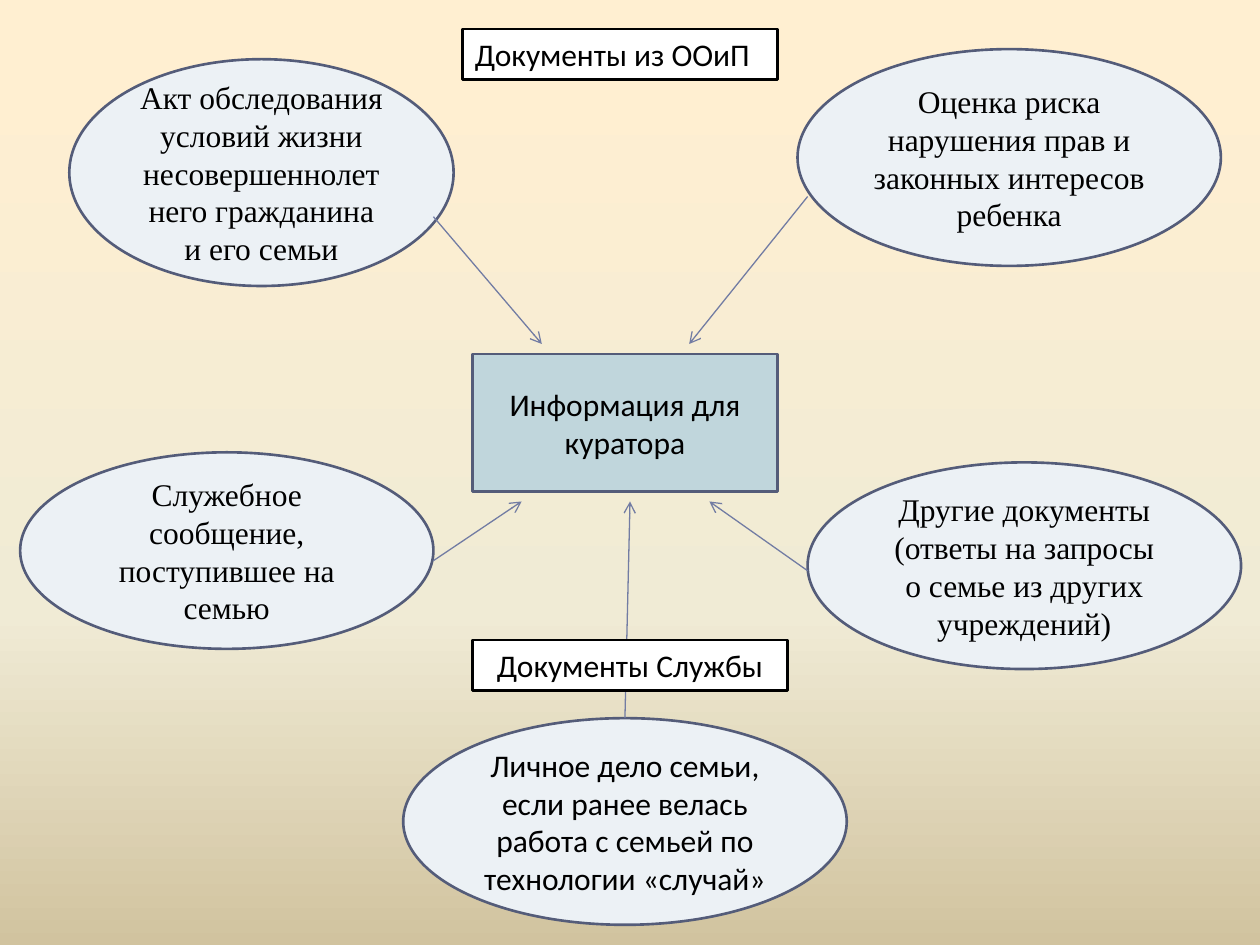
from lxml.etree import SubElement
from pptx import Presentation
from pptx.dml.color import RGBColor
from pptx.enum.shapes import MSO_CONNECTOR, MSO_SHAPE
from pptx.enum.text import MSO_ANCHOR, PP_ALIGN
from pptx.oxml.ns import qn
from pptx.util import Inches, Pt

SERIF, SANS = "Times New Roman", "Calibri"
CENTER_FORMAT = {"word_wrap": True, "vertical_anchor": MSO_ANCHOR.MIDDLE}
LABEL_FORMAT = {"word_wrap": True, "vertical_anchor": MSO_ANCHOR.TOP}


def color(value):
    return RGBColor.from_string(value)


class Diagram:
    text_size = Pt(18)
    outline_width = Pt(1.5)
    arrow_width = Pt(0.75)
    outline, arrow_color = "545C79", "727CA3"

    def __init__(self, deck):
        self.page = deck.slides.add_slide(deck.slide_layouts[6])

    def background(self, stops):
        fill = self.page.background.fill
        fill.gradient()
        fill.gradient_angle = 270
        stop_list = self.page.background._cSld.find(".//" + qn("a:gsLst"))
        for stop in list(stop_list):
            stop_list.remove(stop)
        for position, value in stops:
            stop = SubElement(stop_list, qn("a:gs"), pos=str(position * 1000))
            SubElement(stop, qn("a:srgbClr"), val=value)

    def shape(self, kind, text, place, fill, outline, font, align, frame_format):
        box = self.page.shapes.add_shape(kind, *map(Inches, place))
        box.shadow.inherit = False
        box.fill.solid()
        box.fill.fore_color.rgb = color(fill)
        box.line.color.rgb = color(outline)
        box.line.width = self.outline_width
        for name, value in frame_format.items():
            setattr(box.text_frame, name, value)
        para = box.text_frame.paragraphs[0]
        para.alignment = align
        span = para.add_run()
        span.text = text
        for name, value in {"name": font, "size": self.text_size}.items():
            setattr(span.font, name, value)
        span.font.color.rgb = color("000000")
        return box

    def center(self, text, place):
        return self.shape(MSO_SHAPE.RECTANGLE, text, place, "C0D6DC",
                          self.outline, SANS, PP_ALIGN.CENTER, CENTER_FORMAT)

    def source(self, text, place, font=SERIF):
        return self.shape(MSO_SHAPE.OVAL, text, place, "ECF1F5",
                          self.outline, font, PP_ALIGN.CENTER, CENTER_FORMAT)

    def label(self, text, left, top, align):
        return self.shape(MSO_SHAPE.RECTANGLE, text, (left, top, 2.5, 0.4), "FFFFFF",
                          "000000", SANS, align, LABEL_FORMAT)

    def arrow(self, start, end):
        line = self.page.shapes.add_connector(
            MSO_CONNECTOR.STRAIGHT, *map(Inches, start + end))
        line.line.color.rgb = color(self.arrow_color)
        line.line.width = self.arrow_width
        SubElement(line.line._get_or_add_ln(), qn("a:tailEnd"), type="arrow")
        SubElement(line._element.spPr, qn("a:effectLst"))
        return line


def main():
    deck = Presentation()
    deck.slide_width, deck.slide_height = Inches(10), Inches(7.5)
    diagram = Diagram(deck)
    diagram.background([(7, "FFEFD1"), (65, "F0EBD5"), (100, "D1C39F")])

    # Centre and the four documents around it
    diagram.center("Информация для куратора", (3.75, 2.81, 2.42, 1.09))
    for text, place in [
        ("Оценка риска нарушения прав и законных интересов ребенка",
         (6.33, 0.39, 3.36, 1.72)),
        ("Акт обследования условий жизни несовершеннолетнего гражданина и его семьи",
         (0.55, 0.47, 3.05, 1.8)),
        ("Служебное сообщение, поступившее на семью",
         (0.16, 3.59, 3.28, 1.56)),
        ("Другие документы (ответы на запросы о семье из других учреждений)",
         (6.41, 3.67, 3.44, 1.64)),
    ]:
        diagram.source(text, place)

    # Arrows towards the centre
    for start, end in [
        ((3.44, 1.72), (4.3, 2.73)),
        ((6.41, 1.56), (5.47, 2.73)),
        ((3.44, 4.45), (4.14, 3.98)),
        ((6.41, 4.53), (5.63, 3.98)),
    ]:
        diagram.arrow(start, end)

    # Family file with its arrow
    family_file = diagram.source(
        "Личное дело семьи, если ранее велась работа с семьей по технологии «случай»",
        (3.2, 5.7, 3.52, 1.64), SANS)
    diagram.arrow((4.96, 5.7), (5, 3.98)).begin_connect(family_file, 0)

    # Group labels, above the arrows
    diagram.label("Документы из ООиП", 3.67, 0.23, PP_ALIGN.LEFT)
    diagram.label("Документы Службы", 3.75, 5.08, PP_ALIGN.CENTER)

    deck.save("out.pptx")


if __name__ == "__main__":
    main()
